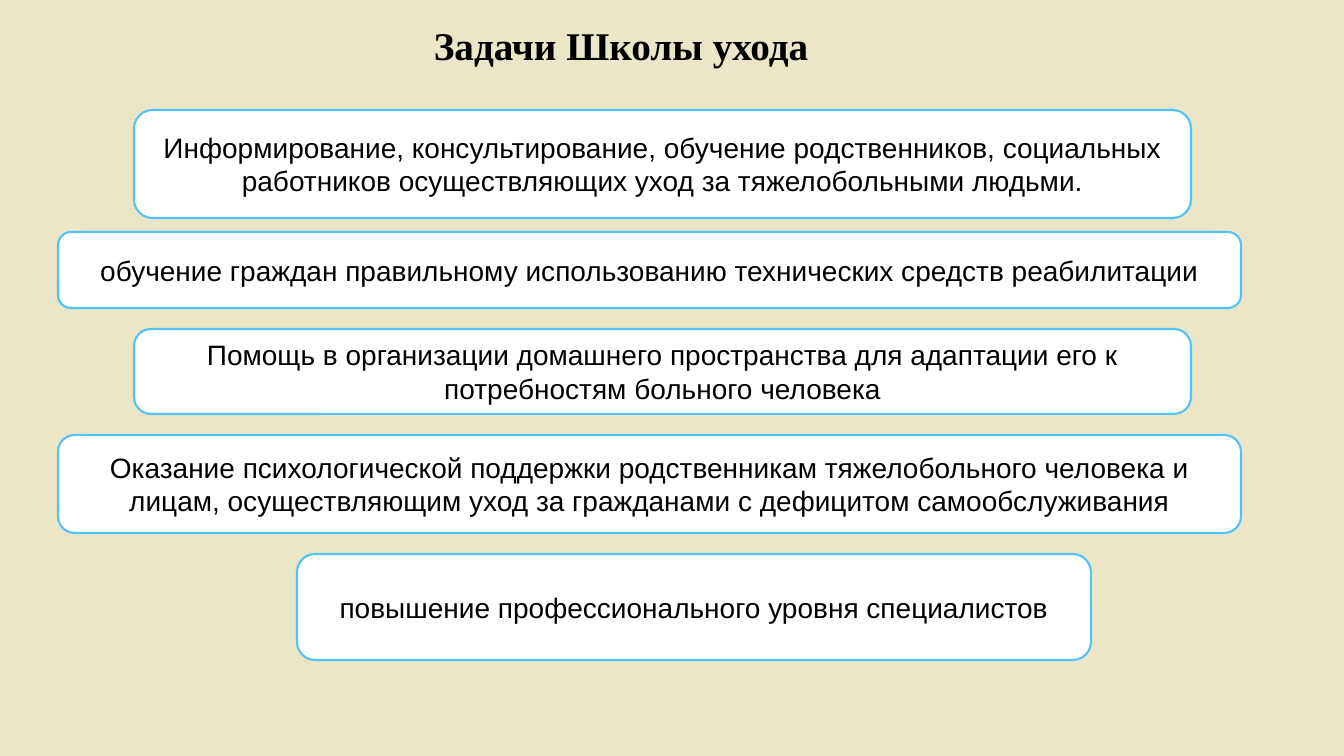
from pptx import Presentation
from pptx.dml.color import RGBColor
from pptx.enum.shapes import MSO_SHAPE
from pptx.enum.text import MSO_ANCHOR, MSO_AUTO_SIZE, PP_ALIGN
from pptx.util import Pt

PX = 914400 / 100.8
COLORS = {"background": "EBE6C8", "box": "FFFFFF", "border": "51C3F9", "text": "000000"}
TITLE_FONT = {"name": "Times New Roman", "size": Pt(28), "bold": True}
TASK_FONT = {"name": "Arial", "size": Pt(20)}


def px(*lengths):
    return [round(n * PX) for n in lengths]


def write(tf, text, font):
    p = tf.paragraphs[0]
    r = p.add_run()
    r.text = text
    for key, value in font.items():
        setattr(r.font, key, value)
    r.font.color.rgb = RGBColor.from_string(COLORS["text"])
    return p


prs = Presentation()
prs.slide_width, prs.slide_height = px(1344, 756)
s = prs.slides.add_slide(prs.slide_layouts[6])
s.background.fill.solid()
s.background.fill.fore_color.rgb = RGBColor.from_string(COLORS["background"])

# Title
tf = s.shapes.add_textbox(*px(424, 16, 527, 57)).text_frame
tf.word_wrap = True
tf.auto_size = MSO_AUTO_SIZE.SHAPE_TO_FIT_TEXT
write(tf, "Задачи Школы ухода", TITLE_FONT)

# Tasks: column (left, width), top, height, corner, text
NARROW, WIDE, LAST = (134, 1057), (58, 1183), (297, 794)
tasks = [
    (NARROW, 110, 108, 0.17, "Информирование, консультирование, обучение родственников, социальных "
     "работников осуществляющих уход за тяжелобольными людьми."),
    (WIDE, 232, 76, 0.17, "обучение граждан правильному использованию технических средств реабилитации"),
    (NARROW, 329, 85, 0.2, "Помощь в организации домашнего пространства для адаптации его к "
     "потребностям больного человека"),
    (WIDE, 435, 98, 0.17, "Оказание психологической поддержки родственникам тяжелобольного человека и "
     "лицам, осуществляющим уход за гражданами с дефицитом самообслуживания"),
    (LAST, 554, 106, 0.17, "повышение профессионального уровня специалистов"),
]
for (left, width), top, height, corner, text in tasks:
    sp = s.shapes.add_shape(MSO_SHAPE.ROUNDED_RECTANGLE, *px(left, top, width, height))
    sp.adjustments[0] = corner
    sp.shadow.inherit = False
    sp.fill.solid()
    sp.fill.fore_color.rgb = RGBColor.from_string(COLORS["box"])
    sp.line.color.rgb = RGBColor.from_string(COLORS["border"])
    sp.line.width = Pt(1.5)
    tf = sp.text_frame
    tf.word_wrap = True
    tf.vertical_anchor = MSO_ANCHOR.MIDDLE
    p = write(tf, text, TASK_FONT)
    p.alignment = PP_ALIGN.CENTER

prs.save("out.pptx")
